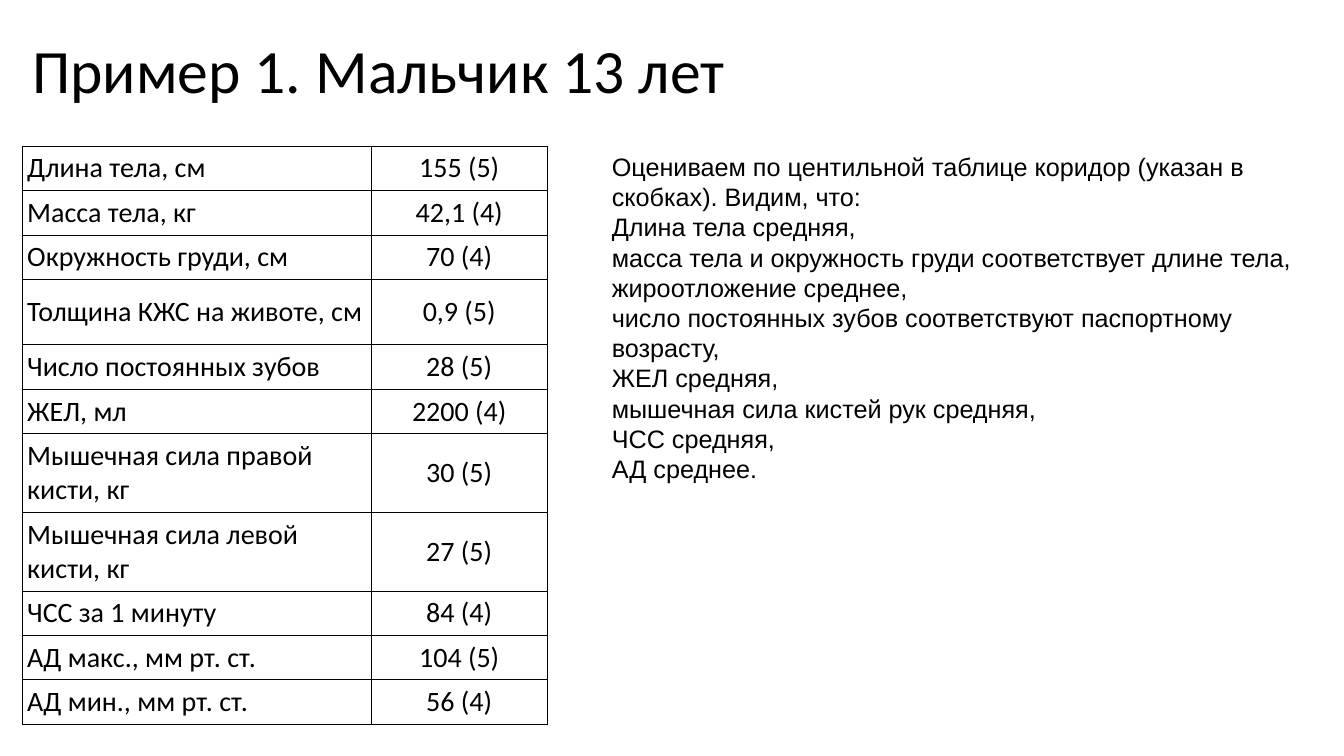
"""Build a slide assessing a 13-year-old boy's measurements."""
from lxml.etree import SubElement
from pptx import Presentation
from pptx.dml.color import RGBColor
from pptx.enum.text import MSO_ANCHOR, MSO_AUTO_SIZE, PP_ALIGN
from pptx.oxml.ns import qn
from pptx.util import Emu, Pt

SCALE = 9144
BLACK = RGBColor(0, 0, 0)
TITLE_FORMAT = {"name": "Calibri", "size": Pt(44)}
CELL_FORMAT = {"name": "Calibri", "size": Pt(20)}
NOTE_FORMAT = {"name": "Arial", "size": Pt(18)}
COLUMN_WIDTHS = (346, 175)
ROW_HEIGHT, TALL_ROW_HEIGHT = 38, 65
TALL_ROWS = (3, 6, 7)
CELL_INSET = 5
MEASUREMENTS = (
    ("Длина тела, см", "155 (5)"),
    ("Масса тела, кг", "42,1 (4)"),
    ("Окружность груди, см", "70 (4)"),
    ("Толщина КЖС на животе, см", "0,9 (5)"),
    ("Число постоянных зубов", "28 (5)"),
    ("ЖЕЛ, мл", "2200 (4)"),
    ("Мышечная сила правой кисти, кг", "30 (5)"),
    ("Мышечная сила левой кисти, кг", "27 (5)"),
    ("ЧСС за 1 минуту", "84 (4)"),
    ("АД макс., мм рт. ст.", "104 (5)"),
    ("АД мин., мм рт. ст.", "56 (4)"),
)
CONCLUSIONS = (
    "Оцениваем по центильной таблице коридор (указан в скобках). Видим, что:",
    "Длина тела средняя,",
    "масса тела и окружность груди соответствует длине тела,",
    "жироотложение среднее,",
    "число постоянных зубов соответствуют паспортному возрасту,",
    "ЖЕЛ средняя,",
    "мышечная сила кистей рук средняя,",
    "ЧСС средняя,",
    "АД среднее.",
)


def px(length):
    return Emu(length * SCALE)


def write(para, text, values):
    span = para.add_run()
    span.text = text
    for key, value in values.items():
        setattr(span.font, key, value)
    span.font.color.rgb = BLACK


def add_title(page, text, left, top, width, height):
    title = page.shapes.title
    title.left, title.top, title.width, title.height = map(px, (left, top, width, height))
    title.text_frame.vertical_anchor = MSO_ANCHOR.MIDDLE
    para = title.text_frame.paragraphs[0]
    para.alignment = PP_ALIGN.LEFT
    para.line_spacing = 0.9
    write(para, text, TITLE_FORMAT)


def add_borders(cell):
    properties = cell._tc.get_or_add_tcPr()
    for side in ("lnL", "lnR", "lnT", "lnB"):
        line = SubElement(properties, qn(f"a:{side}"), w=str(Pt(0.75)))
        fill = SubElement(line, qn("a:solidFill"))
        SubElement(fill, qn("a:srgbClr"), val=str(BLACK))


def fill_cell(cell, text, alignment):
    for side in ("left", "right", "top", "bottom"):
        setattr(cell, f"margin_{side}", px(CELL_INSET))
    cell.vertical_anchor = MSO_ANCHOR.MIDDLE
    add_borders(cell)
    cell.fill.background()
    para = cell.text_frame.paragraphs[0]
    para.alignment = alignment
    write(para, text, CELL_FORMAT)


def add_measurements(page, left, top):
    heights = [TALL_ROW_HEIGHT if index in TALL_ROWS else ROW_HEIGHT
               for index in range(len(MEASUREMENTS))]
    table = page.shapes.add_table(
        len(heights), len(COLUMN_WIDTHS), px(left), px(top),
        px(sum(COLUMN_WIDTHS)), px(sum(heights))).table
    table.first_row = table.horz_banding = False
    for column, width in zip(table.columns, COLUMN_WIDTHS):
        column.width = px(width)
    for row, height, texts in zip(table.rows, heights, MEASUREMENTS):
        row.height = px(height)
        for cell, text, alignment in zip(row.cells, texts, (PP_ALIGN.LEFT, PP_ALIGN.CENTER)):
            fill_cell(cell, text, alignment)


def add_conclusions(page, left, top, width, height):
    box = page.shapes.add_textbox(*map(px, (left, top, width, height)))
    frame = box.text_frame
    frame.word_wrap = True
    frame.auto_size = MSO_AUTO_SIZE.SHAPE_TO_FIT_TEXT
    for index, text in enumerate(CONCLUSIONS):
        para = frame.add_paragraph() if index else frame.paragraphs[0]
        write(para, text, NOTE_FORMAT)


def main():
    deck = Presentation()
    deck.slide_width, deck.slide_height = px(1333), px(750)
    page = deck.slides.add_slide(deck.slide_layouts[5])
    add_title(page, "Пример 1. Мальчик 13 лет", 22, 0, 1150, 145)
    add_measurements(page, 22, 145)
    add_conclusions(page, 597, 145, 736, 343)
    deck.save("out.pptx")


if __name__ == "__main__":
    main()
